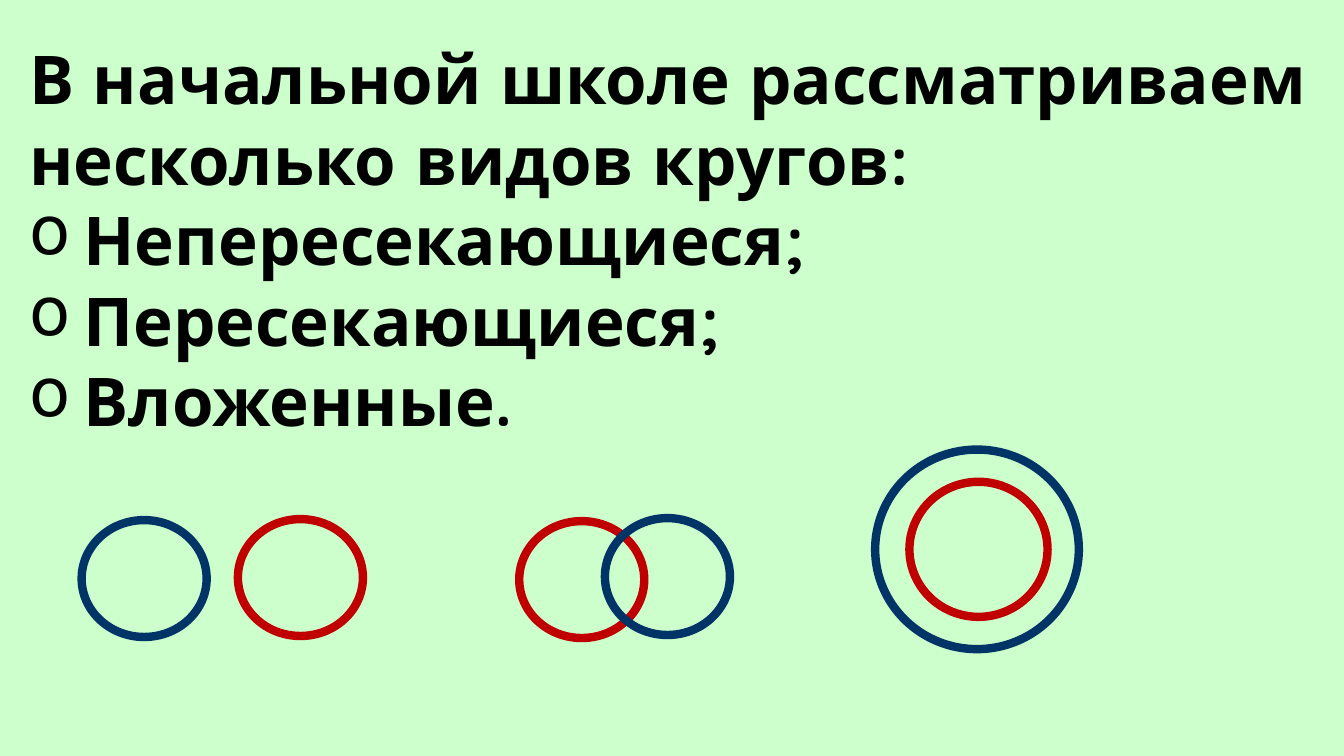
from lxml import etree
from pptx import Presentation
from pptx.dml.color import RGBColor as RGB
from pptx.enum.shapes import MSO_SHAPE as Shape
from pptx.enum.text import MSO_AUTO_SIZE as Fit
from pptx.oxml.ns import qn
from pptx.util import Inches, Pt

COLORS = {"mint": "CCFFCC", "navy": "003366", "red": "C00000", "ink": "000000"}
INTRO = "В начальной школе рассматриваем несколько видов кругов:"
KINDS = ["Непересекающиеся;", "Пересекающиеся;", "Вложенные."]
SMALL = (1.24, 1.16)
LARGE = (2.02, 1.98)
INNER = (1.37, 1.34)
RINGS = [
    (0.81, 5.16, SMALL, "navy"),
    (2.36, 5.15, SMALL, "red"),
    (5.15, 5.17, SMALL, "red"),
    (6, 5.14, SMALL, "navy"),
    (8.68, 4.46, LARGE, "navy"),
    (9.02, 4.78, INNER, "red"),
]


def color(name):
    return RGB.from_string(COLORS[name])


def add_text(para, text, size=48, font="Quicksand", ink="ink", bold=True):
    run = para.add_run()
    run.text = text
    run.font.size = Pt(size)
    run.font.name = font
    run.font.bold = bold
    run.font.color.rgb = color(ink)


def add_bullet(para, char="o", indent=0.54):
    """Give the paragraph a hanging bullet."""
    props = para._p.get_or_add_pPr()
    props.set("marL", str(Inches(indent)))
    props.set("indent", str(-Inches(indent)))
    etree.SubElement(props, qn("a:buChar")).set("char", char)


def add_list(slide, intro, items):
    box = slide.shapes.add_textbox(
        Inches(0.19), Inches(0.32), Inches(13.14), Inches(4.14))
    frame = box.text_frame
    frame.word_wrap = True
    frame.auto_size = Fit.SHAPE_TO_FIT_TEXT
    add_text(frame.paragraphs[0], intro)
    for item in items:
        para = frame.add_paragraph()
        add_bullet(para)
        add_text(para, item)


def add_ring(slide, left, top, size, tint):
    width, height = size
    ring = slide.shapes.add_shape(
        Shape.OVAL, Inches(left), Inches(top), Inches(width), Inches(height))
    ring.shadow.inherit = False
    ring.fill.background()
    ring.line.color.rgb = color(tint)
    ring.line.width = Pt(6)


def main():
    deck = Presentation()
    deck.slide_width = Inches(13.33)
    deck.slide_height = Inches(7.5)
    slide = deck.slides.add_slide(deck.slide_layouts[6])
    back = slide.background.fill
    back.solid()
    back.fore_color.rgb = color("mint")
    add_list(slide, INTRO, KINDS)
    for ring in RINGS:
        add_ring(slide, *ring)
    deck.save("out.pptx")


if __name__ == "__main__":
    main()
